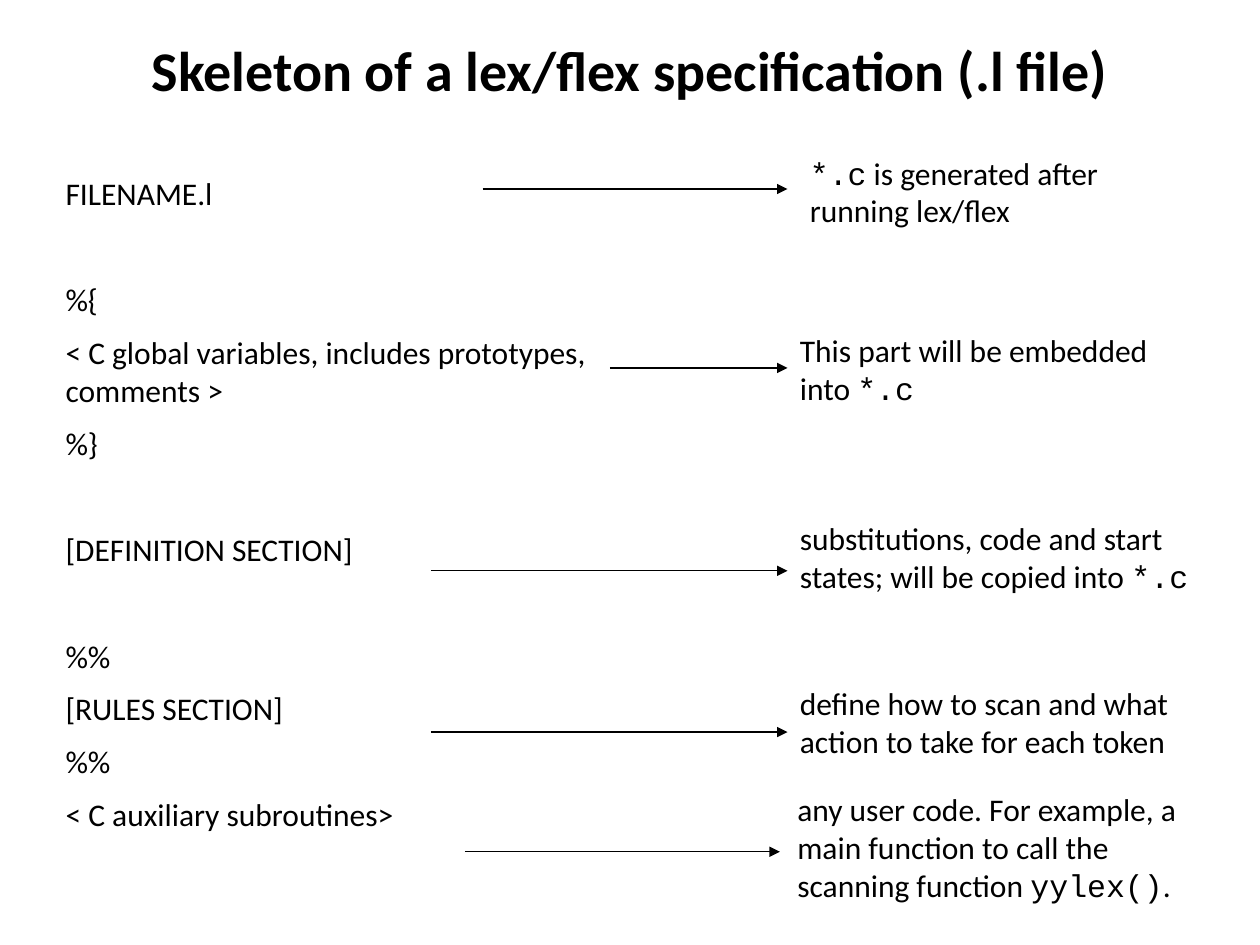
from lxml.etree import SubElement
from pptx import Presentation
from pptx.dml.color import RGBColor
from pptx.enum.shapes import MSO_CONNECTOR as Connector
from pptx.enum.text import MSO_ANCHOR as Anchor, MSO_AUTO_SIZE as AutoSize, PP_ALIGN as Align
from pptx.oxml.ns import qn
from pptx.util import Inches, Pt

BLACK = RGBColor(0, 0, 0)
WHITE = RGBColor(255, 255, 255)

SECTIONS = [
    ("FILENAME.l", False),
    ("%{", True),
    ("< C global variables, includes prototypes, comments >", False),
    ("%}", False),
    ("[DEFINITION SECTION]", True),
    ("%%", True),
    ("[RULES SECTION]", False),
    ("%%", False),
    ("< C auxiliary subroutines>", False),
]
NOTES = [
    ("`*.c` is generated after running lex/flex", (6.33, 1.17, 3.17, 0.7)),
    ("This part will be embedded into `*.c`", (6.25, 2.58, 3.17, 0.7)),
    ("substitutions, code and start states; will be copied into `*.c`", (6.25, 4.07, 3.33, 0.71)),
    ("define how to scan and what action to take for each token", (6.25, 5.38, 3.33, 0.71)),
    ("any user code. For example, a main function to call the scanning function `yylex()`.",
     (6.23, 6.22, 3.33, 1.01)),
]
ARROWS = [(3.83, 6.25, 1.5), (4.84, 6.25, 2.92), (3.42, 6.25, 4.53), (3.42, 6.25, 5.81), (3.69, 6.19, 6.76)]


class SlideWriter:
    """Holds the text style and the slide being written."""

    font, code_font, size = "Calibri", "Courier New", Pt(18)
    gap, section_gap = Pt(8.6), Pt(39.2)

    def __init__(self, page):
        self.page = page
        page.background.fill.solid()
        page.background.fill.fore_color.rgb = WHITE

    def style(self, font, size, bold=False):
        font.name, font.size, font.bold = self.font, size, bold
        font.color.rgb = BLACK

    def place(self, shape, area):
        shape.left, shape.top, shape.width, shape.height = map(Inches, area)
        frame = shape.text_frame
        frame.word_wrap = True
        frame.auto_size = AutoSize.NONE
        return frame

    def title(self, text, area):
        frame = self.place(self.page.shapes.title, area)
        frame.vertical_anchor = Anchor.MIDDLE
        frame.text = text
        para = frame.paragraphs[0]
        para.alignment = Align.CENTER
        self.style(para.font, Pt(32), bold=True)

    def body(self, sections, area):
        frame = self.place(self.page.placeholders[1], area)
        frame.text = "\n".join(text for text, _ in sections)
        for index, (para, (_, starts_group)) in enumerate(zip(frame.paragraphs, sections)):
            properties = para._p.get_or_add_pPr()
            properties.set("marL", "0")
            properties.set("indent", "0")
            SubElement(properties, qn("a:buNone"))
            gap = self.section_gap if starts_group else self.gap
            para.space_before = gap if index else Pt(0)
            self.style(para.font, self.size)

    def note(self, text, area):
        box = self.page.shapes.add_textbox(*map(Inches, area))
        para = self.place(box, area).paragraphs[0]
        self.style(para.font, self.size)
        for index, part in enumerate(text.split("`")):
            if part:
                span = para.add_run()
                span.text = part
                if index % 2:
                    span.font.name = self.code_font

    def arrow(self, start, end, height):
        points = map(Inches, (start, height, end, height))
        arrow = self.page.shapes.add_connector(Connector.STRAIGHT, *points)
        arrow.line.color.rgb = BLACK
        arrow.line.width = Pt(0.75)
        SubElement(arrow.line._get_or_add_ln(), qn("a:tailEnd"), type="triangle")
        SubElement(arrow._element.spPr, qn("a:effectLst"))


def main():
    deck = Presentation()
    deck.slide_width, deck.slide_height = Inches(10), Inches(7.5)
    writer = SlideWriter(deck.slides.add_slide(deck.slide_layouts[1]))
    writer.title("Skeleton of a lex/flex specification (.l file)", (0.5, 0.17, 9, 0.75))
    writer.body(SECTIONS, (0.42, 1.33, 5.25, 5.7))
    for (text, area), arrow in zip(NOTES, ARROWS):
        writer.note(text, area)
        writer.arrow(*arrow)
    deck.save("out.pptx")


if __name__ == "__main__":
    main()
